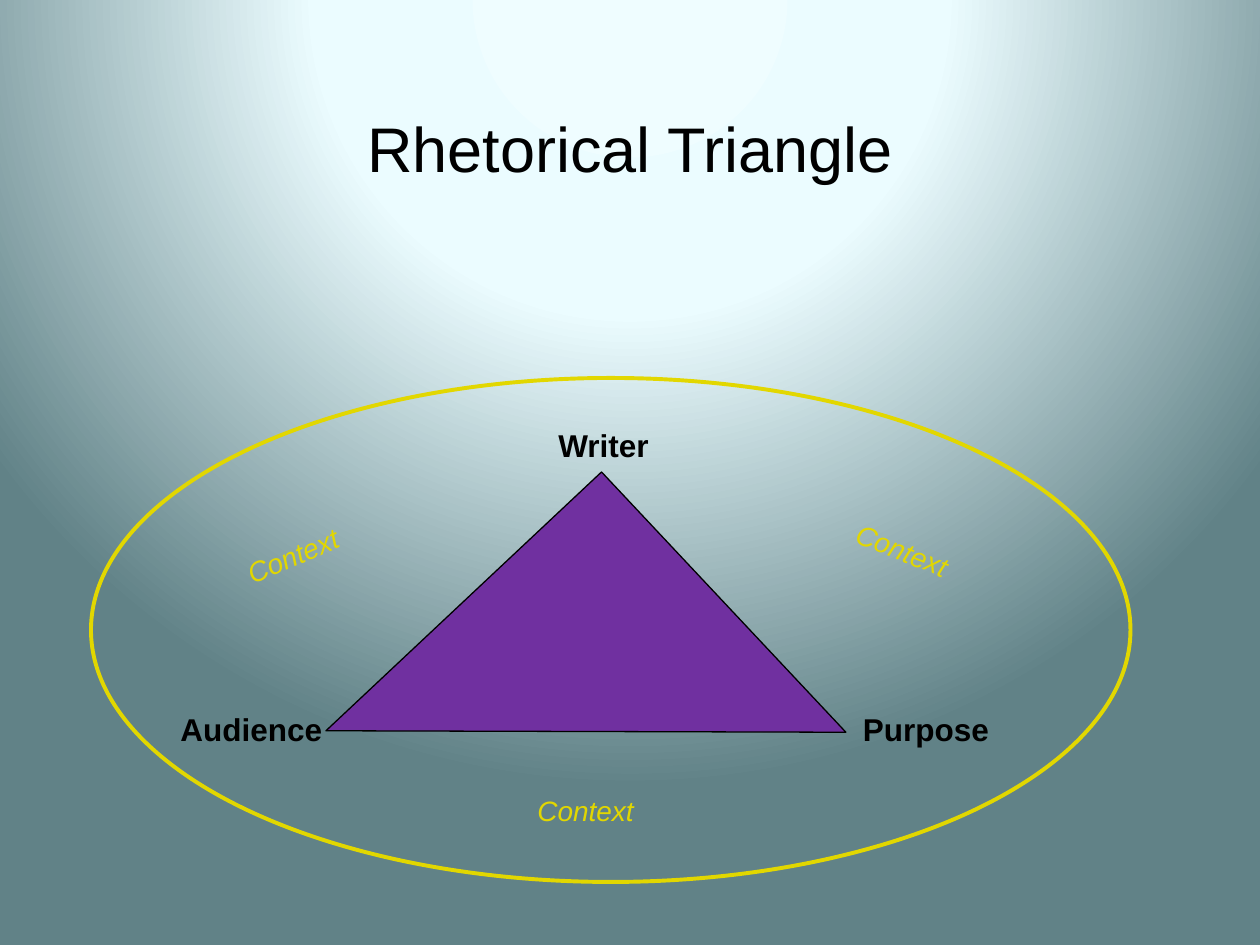
"""Build a slide that shows the rhetorical triangle inside its context."""
from dataclasses import dataclass

from pptx import Presentation
from pptx.dml.color import RGBColor as RGB
from pptx.enum.shapes import MSO_SHAPE as SHAPE
from pptx.enum.text import MSO_ANCHOR as ANCHOR
from pptx.enum.text import MSO_AUTO_SIZE as FIT
from pptx.enum.text import PP_ALIGN as ALIGN
from pptx.oxml import parse_xml
from pptx.oxml.ns import nsdecls, qn
from pptx.util import Pt


@dataclass(frozen=True)
class Theme:
    font: str = "Arial"
    ink: str = "000000"
    gold: str = "E2D700"
    purple: str = "7030A0"
    glow: tuple = ((0, "EFFDFF"), (40, "EBFCFF"), (100, "618287"))
    title: int = 36
    role: int = 18
    context: int = 16


THEME = Theme()


def color(code):
    return RGB.from_string(code)


def style(para, size, code, bold=False, italic=False):
    font = para.font
    font.name, font.size = THEME.font, Pt(size)
    font.bold, font.italic = bold, italic
    font.color.rgb = color(code)


def paint_back(slide):
    slide.background.fill.gradient()
    old = slide.element.find(".//" + qn("a:gradFill"))
    stops = "".join(
        f'<a:gs pos="{pos * 1000}"><a:srgbClr val="{code}"/></a:gs>'
        for pos, code in THEME.glow
    )
    new = parse_xml(
        f'<a:gradFill {nsdecls("a")} rotWithShape="1"><a:gsLst>{stops}</a:gsLst>'
        '<a:path path="circle"><a:fillToRect l="50000" t="-80000" '
        'r="50000" b="180000"/></a:path></a:gradFill>'
    )
    old.getparent().replace(old, new)


def set_title(slide, text, box):
    title = slide.shapes.title
    title.left, title.top, title.width, title.height = map(Pt, box)
    frame = title.text_frame
    frame.text = text
    frame.vertical_anchor = ANCHOR.MIDDLE
    para = frame.paragraphs[0]
    para.alignment = ALIGN.CENTER
    style(para, THEME.title, THEME.ink)


def add_form(slide, kind, box, line, width, fill=None, turn=0):
    form = slide.shapes.add_shape(kind, *map(Pt, box))
    form.shadow.inherit = False
    form.rotation = turn
    form.line.color.rgb = color(line)
    form.line.width = Pt(width)
    if fill:
        form.fill.solid()
        form.fill.fore_color.rgb = color(fill)
    else:
        form.fill.background()


def add_label(slide, text, box, size, code, turn=0, **face):
    label = slide.shapes.add_textbox(*map(Pt, box))
    label.rotation = turn
    frame = label.text_frame
    frame.word_wrap = True
    frame.auto_size = FIT.SHAPE_TO_FIT_TEXT
    frame.text = text
    style(frame.paragraphs[0], size, code, **face)


def main():
    deck = Presentation()
    deck.slide_width, deck.slide_height = Pt(720), Pt(540)
    slide = deck.slides.add_slide(deck.slide_layouts[5])
    paint_back(slide)
    set_title(slide, "Rhetorical Triangle", (36, 36, 648, 96.5))
    add_form(slide, SHAPE.OVAL, (52, 216, 594, 288), THEME.gold, 2.25)
    add_form(slide, SHAPE.RIGHT_TRIANGLE, (226.8, 316, 216, 204),
             THEME.ink, 0.75, THEME.purple, 136.8)
    roles = (("Writer", 312, 240, 78), ("Purpose", 486, 402, 96),
             ("Audience", 96, 402, 96))
    for text, left, top, width in roles:
        add_label(slide, text, (left, top, width, 29), THEME.role,
                  THEME.ink, bold=True)
    spots = ((480, 306, 96, 21.7), (132, 300, 90, 336.7), (300, 450, 90, 0))
    for left, top, width, turn in spots:
        add_label(slide, "Context", (left, top, width, 27), THEME.context,
                  THEME.gold, turn, italic=True)
    deck.save("out.pptx")


if __name__ == "__main__":
    main()
